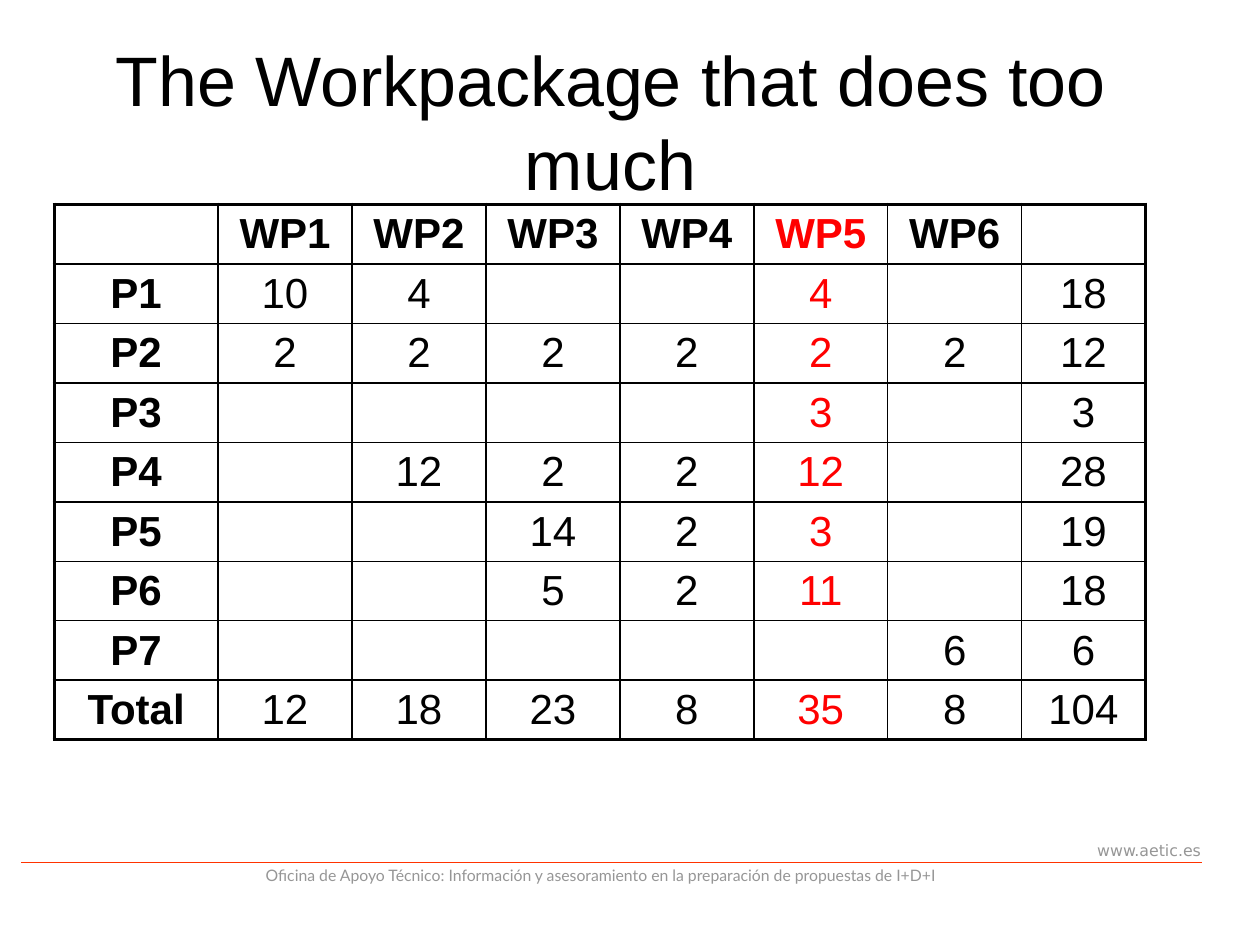
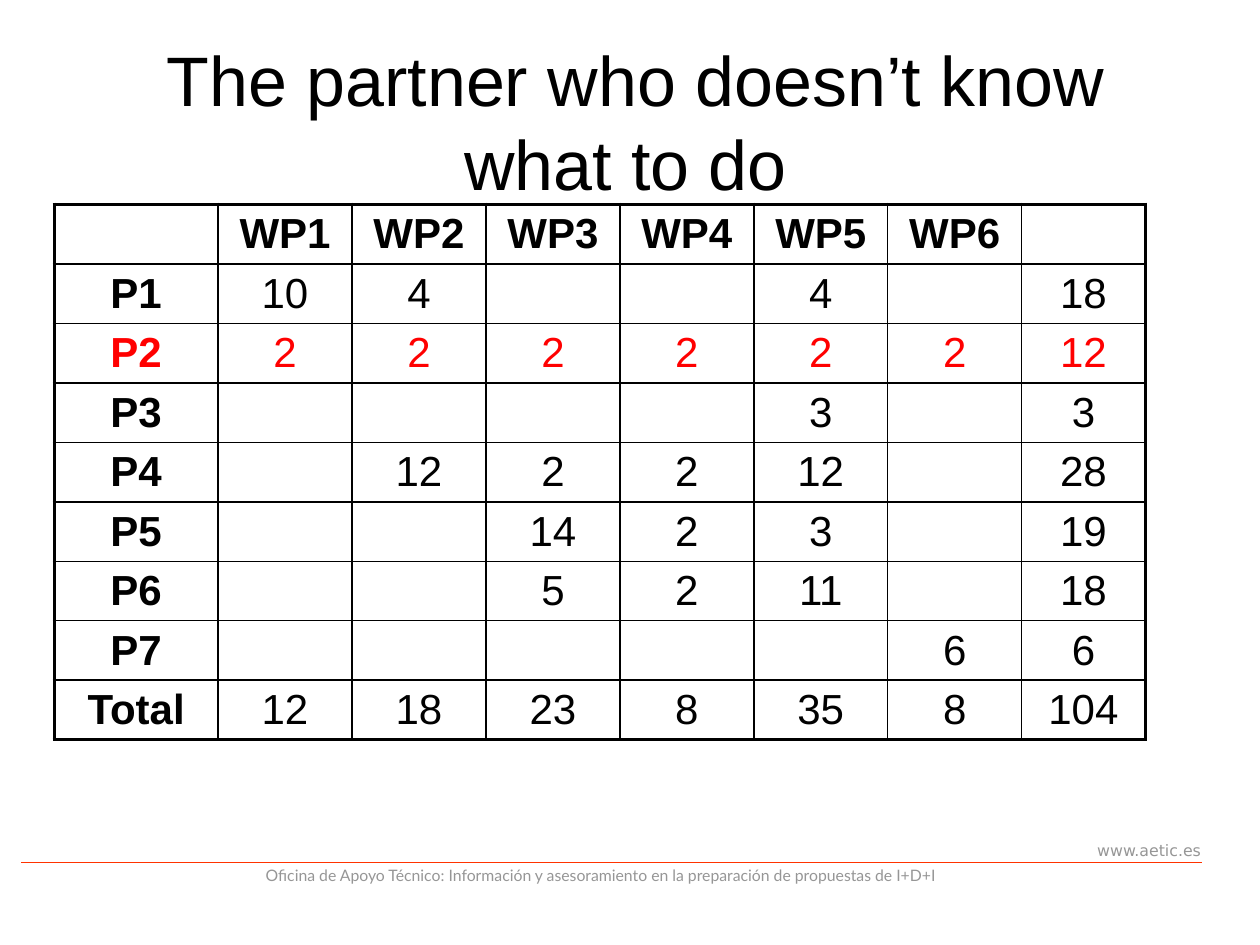
from dataclasses import dataclass
from typing import Optional

from lxml import etree
from pptx import Presentation
from pptx.dml.color import RGBColor
from pptx.enum import shapes, text
from pptx.oxml import ns
from pptx.util import Pt

COLOURS = {"ink": "000000", "highlight": "FF0000", "rule": "FF3300", "footer": "969696"}
THIN, THICK = Pt(1), Pt(2.25)

TABLE_LEFT, TABLE_TOP, ROW_HEIGHT = 31, 116.8, 34
COLUMN_WIDTHS = [93.6] + [76.55] * 6 + [70.6]
EFFORT = [
    ["", "WP1", "WP2", "WP3", "WP4", "WP5", "WP6", ""],
    ["P1", "10", "4", "", "", "4", "", "18"],
    ["P2", "2", "2", "2", "2", "2", "2", "12"],
    ["P3", "", "", "", "", "3", "", "3"],
    ["P4", "", "12", "2", "2", "12", "", "28"],
    ["P5", "", "", "14", "2", "3", "", "19"],
    ["P6", "", "", "5", "2", "11", "", "18"],
    ["P7", "", "", "", "", "", "6", "6"],
    ["Total", "12", "18", "23", "8", "35", "8", "104"],
]


@dataclass
class EffortSlide:
    title: str
    title_width: float
    red_row: Optional[int] = None
    red_column: Optional[int] = None


@dataclass
class FooterText:
    words: str
    left: float
    top: float
    width: float
    font: str
    align: text.PP_ALIGN


SLIDES = [
    EffortSlide("The Workpackage that does too much", 589.7, red_column=5),
    EffortSlide("The partner who doesn’t know what to do ", 617.8, red_row=2),
]
FOOTERS = [
    FooterText("www.aetic.es", 575.3, 476.6, 118, "DejaVu Sans", text.PP_ALIGN.RIGHT),
    FooterText("Oficina de Apoyo Técnico: Información y asesoramiento en la "
               "preparación de propuestas de I+D+I",
               108.7, 491, 468.7, "Lato", text.PP_ALIGN.CENTER),
]


def write(frame, words: str, *, size: float, font: str = "Arial", colour: str = "ink",
          bold: bool = False, align: text.PP_ALIGN = text.PP_ALIGN.CENTER) -> None:
    paragraph = frame.paragraphs[0]
    paragraph.alignment = align
    run = paragraph.add_run()
    run.text = words
    run.font.size, run.font.name, run.font.bold = Pt(size), font, bold
    run.font.color.rgb = RGBColor.from_string(COLOURS[colour])


def add_footer(slide) -> None:
    """Draw the footer on the slide's layout, so that every slide shows it."""
    rule = slide.shapes.add_connector(shapes.MSO_CONNECTOR.STRAIGHT,
                                      Pt(12.3), Pt(493), Pt(687), Pt(493))
    rule.line.color.rgb = RGBColor.from_string(COLOURS["rule"])
    rule.line.width = Pt(0.75)
    etree.SubElement(rule.element.spPr, ns.qn("a:effectLst"))
    parts = [rule]
    for footer in FOOTERS:
        box = slide.shapes.add_textbox(Pt(footer.left), Pt(footer.top), Pt(footer.width), Pt(18))
        box.text_frame.word_wrap = True
        write(box.text_frame, footer.words, size=9, font=footer.font,
              colour="footer", align=footer.align)
        parts.append(box)
    for part in parts:
        slide.slide_layout.shapes.element.append(part.element)


def set_borders(cell, row: int, column: int) -> None:
    """Thick lines around the table, thin ones inside."""
    outer = {"L": column == 0, "R": column == len(COLUMN_WIDTHS) - 1,
             "T": row == 0, "B": row == len(EFFORT) - 1}
    properties = cell._tc.get_or_add_tcPr()
    for side, is_outer in outer.items():
        line = etree.SubElement(properties, ns.qn(f"a:ln{side}"),
                                w=str(THICK if is_outer else THIN))
        fill = etree.SubElement(line, ns.qn("a:solidFill"))
        etree.SubElement(fill, ns.qn("a:srgbClr"), val=COLOURS["ink"])


def add_effort_table(slide, content: EffortSlide) -> None:
    frame = slide.shapes.add_table(len(EFFORT), len(COLUMN_WIDTHS), Pt(TABLE_LEFT), Pt(TABLE_TOP),
                                   Pt(sum(COLUMN_WIDTHS)), Pt(ROW_HEIGHT * len(EFFORT)))
    table = frame.table
    table.first_row = table.horz_banding = False
    for column, width in zip(table.columns, COLUMN_WIDTHS):
        column.width = Pt(width)
    for row, values in enumerate(EFFORT):
        table.rows[row].height = Pt(ROW_HEIGHT)
        for column, value in enumerate(values):
            cell = table.cell(row, column)
            set_borders(cell, row, column)
            cell.fill.background()
            if value:
                is_red = row == content.red_row or column == content.red_column
                write(cell.text_frame, value, size=24, bold=row == 0 or column == 0,
                      colour="highlight" if is_red else "ink")


def add_title(slide, content: EffortSlide) -> None:
    title = slide.shapes.title
    title.left, title.top = Pt(54), Pt(12.2)
    title.width, title.height = Pt(content.title_width), Pt(113.8)
    title.text_frame.auto_size = text.MSO_AUTO_SIZE.NONE
    title.text_frame.vertical_anchor = text.MSO_ANCHOR.MIDDLE
    write(title.text_frame, content.title, size=40)


def main() -> None:
    presentation = Presentation()
    presentation.slide_width, presentation.slide_height = Pt(720), Pt(540)
    layout = presentation.slide_layouts[5]
    for number, content in enumerate(SLIDES):
        slide = presentation.slides.add_slide(layout)
        if number == 0:
            add_footer(slide)
        add_title(slide, content)
        add_effort_table(slide, content)
    presentation.save("out.pptx")


if __name__ == "__main__":
    main()
